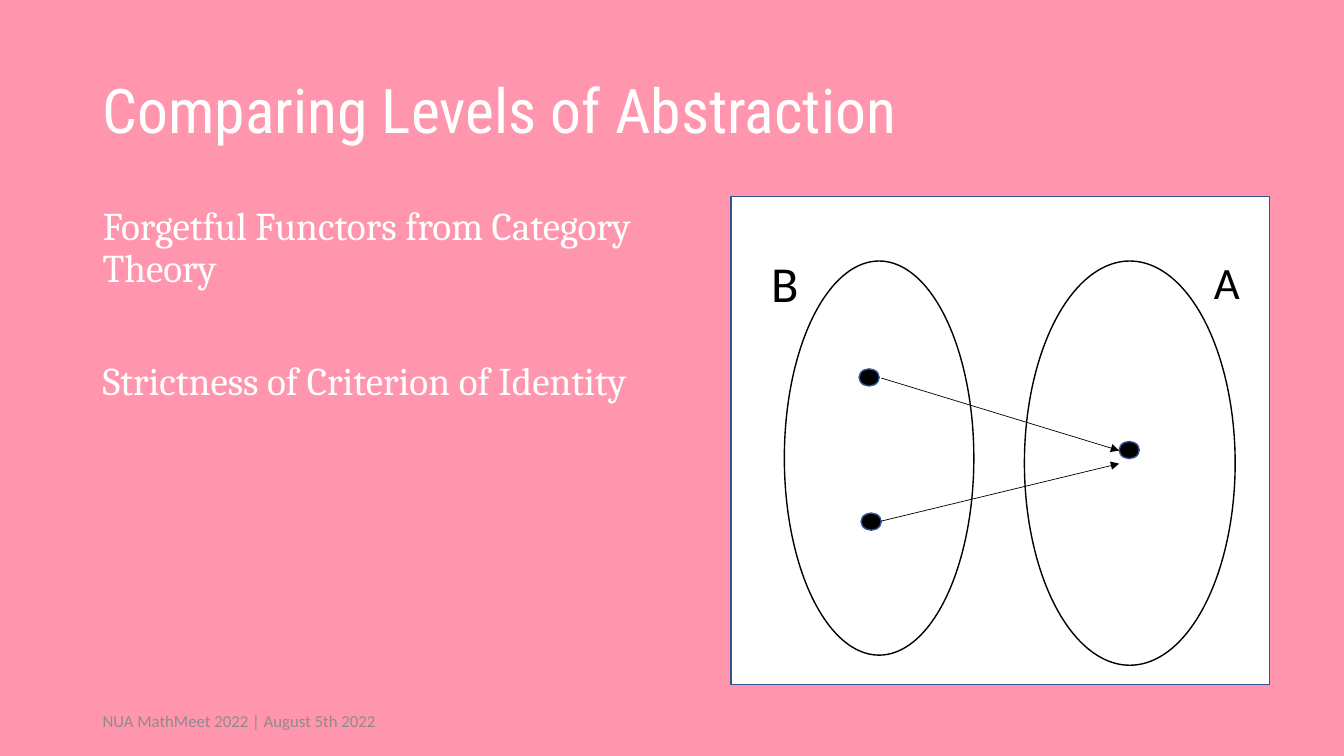
from dataclasses import dataclass
from typing import Any

from lxml.etree import SubElement as Sub
from pptx import Presentation
from pptx.dml.color import RGBColor
from pptx.enum.shapes import MSO_CONNECTOR as Link, MSO_SHAPE as Form
from pptx.enum.text import MSO_ANCHOR as Anchor, MSO_AUTO_SIZE as Auto
from pptx.oxml.ns import qn
from pptx.util import Inches, Pt

WIDE, HIGH = Inches(13.33), Inches(7.5)
WHITE, BLACK, BLUE, PINK, GREY = "FFFFFF", "000000", "325491", "FF96AE", "8C8C8C"


@dataclass(frozen=True)
class Box:
    x: float
    y: float
    w: float
    h: float


@dataclass(frozen=True)
class Label:
    box: Box
    lines: tuple[str, ...]
    font: dict[str, Any]
    hue: str
    frame: dict[str, Any]
    para: dict[str, Any]
    gap: float = 0


@dataclass(frozen=True)
class Figure:
    form: Form
    box: Box
    fill: str
    edge: str


@dataclass(frozen=True)
class Arrow:
    x: float
    y: float
    to_x: float
    to_y: float


def across(share: float) -> int:
    return round(WIDE * share / 100)


def down(share: float) -> int:
    return round(HIGH * share / 100)


def place(box: Box) -> tuple[int, int, int, int]:
    return across(box.x), down(box.y), across(box.w), down(box.h)


def paint(part: Any, hue: str) -> None:
    part.rgb = RGBColor.from_string(hue)


def style(part: Any, values: dict[str, Any]) -> None:
    for key, value in values.items():
        setattr(part, key, value)


def fill(part: Any, hue: str) -> None:
    part.solid()
    paint(part.fore_color, hue)


def write(slide: Any, label: Label) -> None:
    frame = slide.shapes.add_textbox(*place(label.box)).text_frame
    style(frame, {"word_wrap": True} | label.frame)
    for row, line in enumerate(label.lines):
        para = frame.add_paragraph() if row else frame.paragraphs[0]
        style(para, label.para)
        if row:
            para.space_before = Pt(label.gap)
        run = para.add_run()
        run.text = line
        style(run.font, label.font)
        paint(run.font.color, label.hue)


def draw(slide: Any, item: Figure) -> None:
    shape = slide.shapes.add_shape(item.form, *place(item.box))
    shape.shadow.inherit = False
    fill(shape.fill, item.fill)
    paint(shape.line.color, item.edge)
    shape.line.width = Pt(1)


def point(slide: Any, item: Arrow) -> None:
    line = slide.shapes.add_connector(
        Link.STRAIGHT, across(item.x), down(item.y), across(item.to_x), down(item.to_y)
    )
    paint(line.line.color, BLACK)
    line.line.width = Pt(0.5)
    Sub(line.line._get_or_add_ln(), qn("a:tailEnd"), type="triangle")
    Sub(line._element.spPr, qn("a:effectLst"))


def face(name: str, size: float) -> dict[str, Any]:
    return {"name": name, "size": Pt(size)}


MIDDLE = {"vertical_anchor": Anchor.MIDDLE}
GROW = {"auto_size": Auto.SHAPE_TO_FIT_TEXT}
TIGHT = {"line_spacing": 0.9}

TEXTS = [
    Label(Box(6.9, 5.33, 86.27, 19.33), ("Comparing Levels of Abstraction",),
          face("Roboto Condensed", 44), WHITE, MIDDLE, TIGHT),
    Label(Box(6.9, 26.67, 45.61, 63.47),
          ("Forgetful Functors from Category Theory", "Strictness of Criterion of Identity"),
          face("Cambria", 28), WHITE, {}, TIGHT | {"space_before": Pt(10)}, 50.5),
    Label(Box(6.9, 92.67, 22.5, 5.33), ("NUA MathMeet 2022 | August 5th 2022",),
          face("Calibri", 12), GREY, MIDDLE, {}),
]
NAMES = [
    Label(Box(56.64, 32.67, 3.53, 9.47), ("B",), face("Calibri", 36), BLACK, GROW, {}),
    Label(Box(89.57, 33.07, 3.6, 8.53), ("A",), face("Calibri", 32), BLACK, GROW, {}),
]
DOTS = [(63.92, 48.8), (64.07, 67.87), (83.27, 58.4)]
FIGURES = [
    Figure(Form.RECTANGLE, Box(54.39, 26, 40.06, 64.53), WHITE, BLUE),
    Figure(Form.OVAL, Box(58.36, 34.53, 14.1, 52.13), WHITE, BLACK),
    Figure(Form.OVAL, Box(76.22, 34.53, 15.68, 53.47), WHITE, BLACK),
    *(Figure(Form.OVAL, Box(x, y, 1.5, 2.27), BLACK, BLUE) for x, y in DOTS),
]
ARROWS = [Arrow(65.57, 50, 83.27, 59.6), Arrow(65.57, 68.93, 83.27, 61.33)]


def main() -> None:
    deck = Presentation()
    style(deck, {"slide_width": WIDE, "slide_height": HIGH})
    slide = deck.slides.add_slide(deck.slide_layouts[6])
    fill(slide.background.fill, PINK)
    for text in TEXTS:
        write(slide, text)
    for item in FIGURES:
        draw(slide, item)
    for arrow in ARROWS:
        point(slide, arrow)
    for name in NAMES:
        write(slide, name)
    deck.save("out.pptx")


if __name__ == "__main__":
    main()
